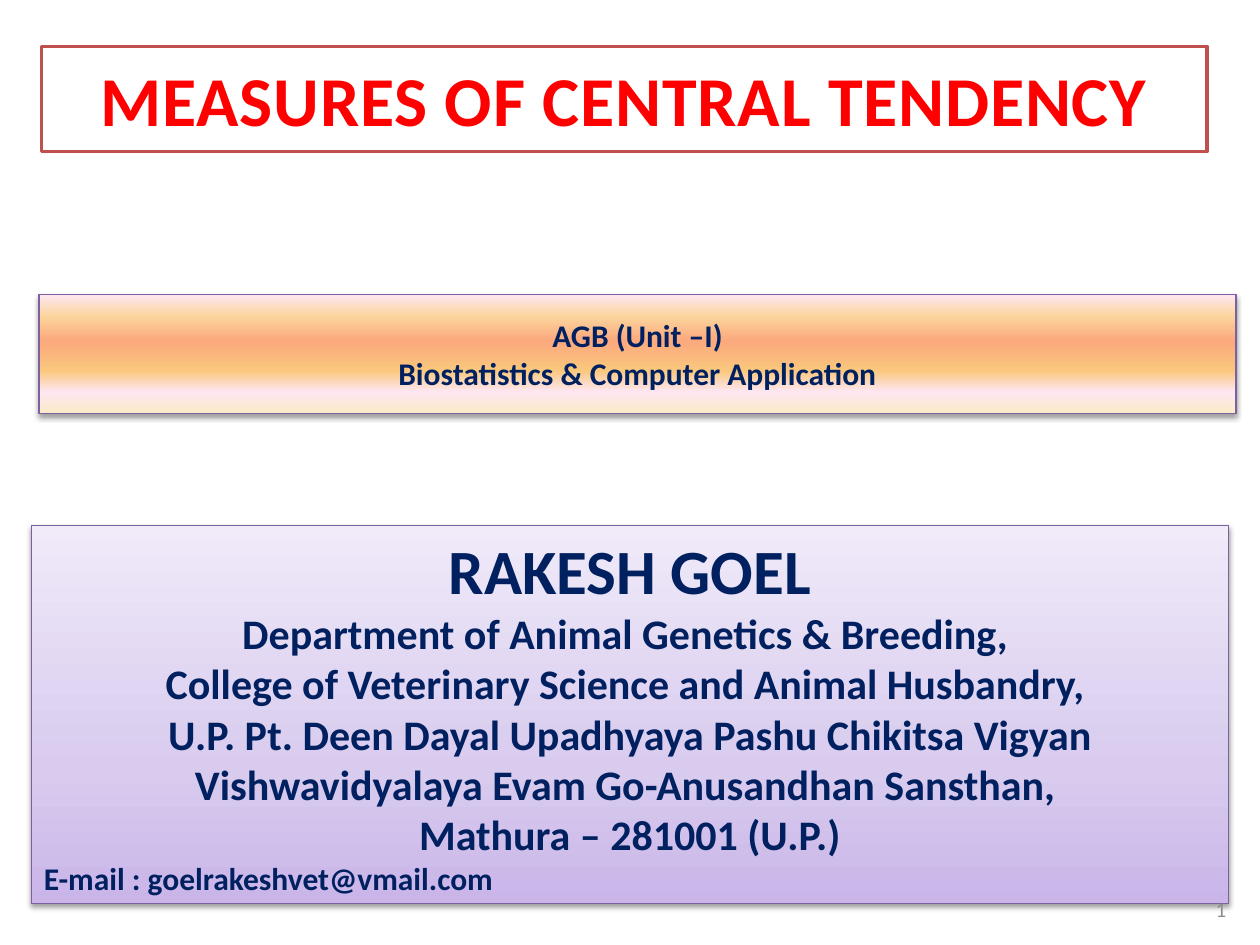
from lxml.etree import SubElement
from pptx import Presentation
from pptx.dml.color import RGBColor
from pptx.enum.shapes import MSO_SHAPE
from pptx.enum.text import MSO_ANCHOR, MSO_AUTO_SIZE, PP_ALIGN
from pptx.oxml.ns import qn
from pptx.util import Inches, Pt

# Content: (text, format) per paragraph
NAVY = {"size": 18, "bold": True, "color": "002060", "align": PP_ALIGN.CENTER}
ADDRESS = {**NAVY, "size": 24}

TITLE = [("MEASURES OF CENTRAL TENDENCY",
          {**NAVY, "size": 40, "color": "FF0000", "spacing": 0.5})]
AUTHOR = [
    ("RAKESH GOEL", {**NAVY, "size": 36}),
    ("Department of Animal Genetics & Breeding, ", ADDRESS),
    ("College of Veterinary Science and Animal Husbandry, ", ADDRESS),
    ("U.P. Pt. Deen Dayal Upadhyaya Pashu Chikitsa Vigyan "
     "Vishwavidyalaya Evam Go-Anusandhan Sansthan, ", ADDRESS),
    ("Mathura – 281001 (U.P.)", ADDRESS),
    ("E-mail : goelrakeshvet@vmail.com", {**NAVY, "align": PP_ALIGN.LEFT}),
]
COURSE = [("AGB (Unit –I)", NAVY), ("Biostatistics & Computer Application", NAVY)]
PAGE_NUMBER = [("1", {"size": 12, "bold": False, "color": "8C8C8C",
                      "align": PP_ALIGN.RIGHT})]

# Gradient stops run from the bottom edge to the top edge: (percent, colour)
LILAC = [(0, "C9B5E8"), (35, "D8CBEE"), (100, "F0EAF9")]
SUNSET = [(0, "FBEAC7"), (18, "FEE7F2"), (36, "FAC77D"),
          (61, "FBA97D"), (82, "FBD49C"), (100, "FEE7F2")]


def rgb(value):
    return RGBColor.from_string(value)


def place(shape, left, top, width, height):
    position = {"left": left, "top": top, "width": width, "height": height}
    for name, value in position.items():
        setattr(shape, name, Inches(value))


def outline(shape, color, width):
    shape.line.color.rgb = rgb(color)
    shape.line.width = Pt(width)


def write(shape, lines):
    frame = shape.text_frame
    frame.word_wrap = True
    frame.vertical_anchor = MSO_ANCHOR.MIDDLE
    for index, (text, style) in enumerate(lines):
        para = frame.add_paragraph() if index else frame.paragraphs[0]
        para.alignment = style["align"]
        span = para.add_run()
        span.text = text
        font = {"name": "Calibri", "size": Pt(style["size"]), "bold": style["bold"]}
        for name, value in font.items():
            setattr(span.font, name, value)
        span.font.color.rgb = rgb(style["color"])
        if "spacing" in style:
            span._r.get_or_add_rPr().set("spc", str(int(style["spacing"] * 100)))


def add_color(parent, color):
    return SubElement(parent, qn("a:srgbClr"), val=color)


def add_panel(page, at, stops, lines):
    panel = page.shapes.add_shape(MSO_SHAPE.RECTANGLE, *map(Inches, at))
    outline(panel, "7D60A0", 0.75)

    # Gradient fill
    panel.fill.gradient()
    panel.fill.gradient_angle = 90
    properties = panel._element.spPr
    stop_list = properties.find(".//" + qn("a:gsLst"))
    for stop in list(stop_list):
        stop_list.remove(stop)
    for percent, color in stops:
        add_color(SubElement(stop_list, qn("a:gs"), pos=str(percent * 1000)), color)

    # Soft shadow below
    panel.shadow.inherit = False
    shadow = SubElement(properties.find(qn("a:effectLst")), qn("a:outerShdw"),
                        blurRad=str(Pt(3.1)), dist=str(Pt(1.6)),
                        dir="5400000", rotWithShape="0")
    SubElement(add_color(shadow, "000000"), qn("a:alpha"), val="38000")
    write(panel, lines)


def main():
    deck = Presentation()
    deck.slide_width, deck.slide_height = Inches(10), Inches(7.5)
    page = deck.slides.add_slide(deck.slide_layouts[5])

    # Title
    title = page.shapes.title
    place(title, 0.33, 0.4, 9.25, 0.77)
    title.fill.solid()
    title.fill.fore_color.rgb = rgb("FFFFFF")
    outline(title, "C0504D", 2)
    write(title, TITLE)
    title.text_frame.auto_size = MSO_AUTO_SIZE.SHAPE_TO_FIT_TEXT

    # Author, page number and course
    add_panel(page, (0.25, 4.17, 9.5, 3), LILAC, AUTHOR)
    number = page.shapes.add_textbox(*map(Inches, (9, 7.08, 0.83, 0.27)))
    write(number, PAGE_NUMBER)
    add_panel(page, (0.31, 2.34, 9.5, 0.94), SUNSET, COURSE)

    deck.save("out.pptx")


if __name__ == "__main__":
    main()
